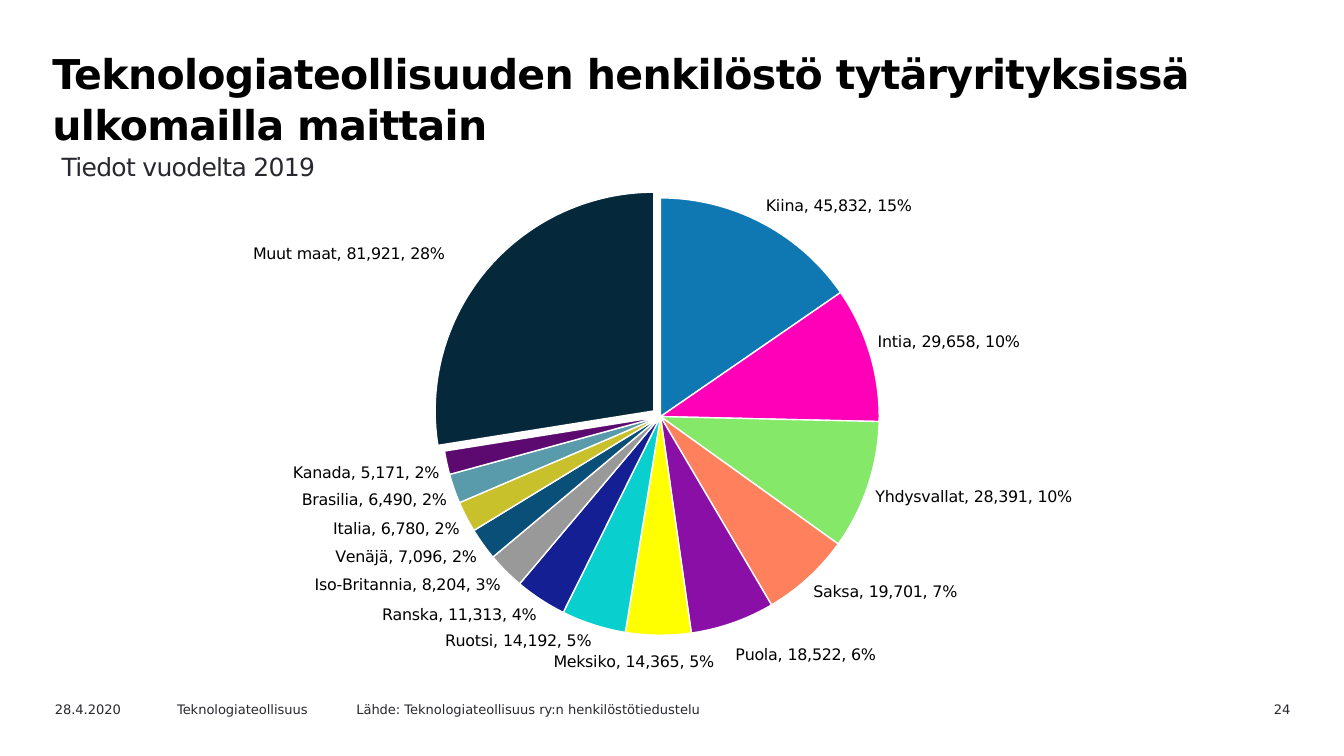
from copy import deepcopy

from lxml.etree import SubElement
from pptx import Presentation
from pptx.chart.data import CategoryChartData
from pptx.dml.color import RGBColor
from pptx.enum.chart import XL_CHART_TYPE, XL_LABEL_POSITION
from pptx.enum.text import PP_ALIGN
from pptx.oxml.ns import qn
from pptx.util import Pt

FONT = "DejaVu Sans"
BLACK = RGBColor(0x00, 0x00, 0x00)
WHITE = RGBColor(0xFF, 0xFF, 0xFF)
INK = RGBColor(0x29, 0x28, 0x2E)

# Country, staff, slice colour
COUNTRIES = [
    ("Kiina", 45832, RGBColor(0x0F, 0x78, 0xB2)),
    ("Intia", 29658, RGBColor(0xFF, 0x00, 0xB8)),
    ("Yhdysvallat", 28391, RGBColor(0x85, 0xE8, 0x69)),
    ("Saksa", 19701, RGBColor(0xFF, 0x80, 0x5C)),
    ("Puola", 18522, RGBColor(0x8A, 0x0F, 0xA6)),
    ("Meksiko", 14365, RGBColor(0xFF, 0xFF, 0x00)),
    ("Ruotsi", 14192, RGBColor(0x0A, 0xCF, 0xCF)),
    ("Ranska", 11313, RGBColor(0x14, 0x1F, 0x94)),
    ("Iso-Britannia", 8204, RGBColor(0x99, 0x99, 0x99)),
    ("Venäjä", 7096, RGBColor(0x0A, 0x4F, 0x77)),
    ("Italia", 6780, RGBColor(0xC8, 0xC1, 0x2C)),
    ("Brasilia", 6490, RGBColor(0x59, 0x9B, 0xAA)),
    ("Kanada", 5171, RGBColor(0x5C, 0x0A, 0x6F)),
    ("Muut maat", 81921, RGBColor(0x05, 0x28, 0x3B)),
]
# Label shifts as shares of the chart's width and height
LABEL_SHIFTS = {"Puola": (0, 0.03), "Meksiko": (-0.02, 0.02), "Muut maat": (-0.03, 0)}
EXPLODED = "Muut maat"
EXPLOSION = 4


def set_format(target, values):
    for name, value in values.items():
        setattr(target, name, value)


def add_text(slide, box, text, size, color=INK, bold=False, align=PP_ALIGN.LEFT,
             tracking=0, margin=None, wrap=True, line_spacing=None):
    shape = slide.shapes.add_textbox(*map(Pt, box))
    frame = shape.text_frame
    frame.word_wrap = wrap
    if margin is not None:
        sides = ("left", "top", "right", "bottom")
        set_format(frame, {f"margin_{side}": Pt(margin) for side in sides})
    paragraph = frame.paragraphs[0]
    paragraph.alignment = align
    if line_spacing:
        paragraph.line_spacing = Pt(line_spacing)
    run = paragraph.add_run()
    run.text = text
    set_format(run.font, {"name": FONT, "size": Pt(size), "bold": bold})
    run.font.color.rgb = color
    if tracking:
        run.font._element.set("spc", str(tracking))


def add_heading(slide, box):
    left, top, width, height = box
    add_text(slide, (left + 1, top, width - 1, height),
             "Teknologiateollisuuden henkilöstö tytäryrityksissä ulkomailla maittain",
             22, BLACK, bold=True, tracking=-35, line_spacing=27)
    add_text(slide, (left + 10, top + 56, 153, 22), "Tiedot vuodelta 2019",
             13.4, tracking=-40, margin=3, wrap=False)


def add_manual_layout(parent, values):
    layout = SubElement(parent, qn("c:layout"))
    manual = SubElement(layout, qn("c:manualLayout"))
    for tag, value in values.items():
        SubElement(manual, qn(f"c:{tag}")).set("val", str(value))
    return layout


def finish_labels(labels):
    """Part the label fields with commas and hide leader lines."""
    parent = labels._element
    for old in parent.findall(qn("c:showLeaderLines")):
        parent.remove(old)
    SubElement(parent, qn("c:separator")).text = ", "
    SubElement(parent, qn("c:showLeaderLines")).set("val", "0")


def shift_label(labels, index, shift):
    """Give one slice its own label, moved from the default place."""
    parent = labels._element
    label = parent.makeelement(qn("c:dLbl"), {})
    SubElement(label, qn("c:idx")).set("val", str(index))
    add_manual_layout(label, dict(zip("xy", shift)))
    for child in parent:
        if child.tag not in (qn("c:dLbl"), qn("c:showLeaderLines")):
            label.append(deepcopy(child))
    position = len(parent.findall(qn("c:dLbl")))
    parent.insert(position, label)


def add_staff_pie(slide, box):
    data = CategoryChartData(number_format="#,##0")
    data.categories = [name for name, _, _ in COUNTRIES]
    data.add_series("Series 1", [staff for _, staff, _ in COUNTRIES])
    frame = slide.shapes.add_chart(XL_CHART_TYPE.PIE, *map(Pt, box), data)
    chart = frame.chart
    set_format(chart, {"has_legend": False, "has_title": False})
    set_format(chart.font, {"name": FONT, "size": Pt(18)})
    chart.font.color.rgb = INK
    plot = chart.plots[0]
    plot.vary_by_categories = True

    # Circle inside the chart box
    plot_area = plot._element.getparent()
    for old in plot_area.findall(qn("c:layout")):
        plot_area.remove(old)
    layout = add_manual_layout(plot_area, {
        "layoutTarget": "inner", "xMode": "edge", "yMode": "edge",
        "x": 0.31, "y": 0.07, "w": 0.36, "h": 0.84})
    plot_area.insert(0, layout)

    # Labels; values take the number format of the data
    series = plot.series[0]
    labels = series.data_labels
    set_format(labels, {
        "show_value": True, "show_category_name": True, "show_percentage": True,
        "position": XL_LABEL_POSITION.OUTSIDE_END})
    set_format(labels.font, {"name": FONT, "size": Pt(8.5)})
    labels.font.color.rgb = BLACK
    finish_labels(labels)

    # Slices
    for index, (name, _, color) in enumerate(COUNTRIES):
        point = series.points[index]
        point.format.fill.solid()
        point.format.fill.fore_color.rgb = color
        point.format.line.color.rgb = WHITE
        point.format.line.width = Pt(0.75)
        if name == EXPLODED:
            point_element = series._element.findall(qn("c:dPt"))[-1]
            explosion = SubElement(point_element, qn("c:explosion"))
            explosion.set("val", str(EXPLOSION))
            point_element.find(qn("c:spPr")).addprevious(explosion)
        if name in LABEL_SHIFTS:
            shift_label(labels, index, LABEL_SHIFTS[name])


def add_footer(slide, box):
    left, top, width, height = box
    parts = [
        (0, 72, "28.4.2020", PP_ALIGN.LEFT),
        (65.5, 102, "Teknologiateollisuus", PP_ALIGN.LEFT),
        (161.5, 234, "Lähde: Teknologiateollisuus ry:n henkilöstötiedustelu", PP_ALIGN.LEFT),
        (width - 68, 68, "24", PP_ALIGN.RIGHT),
    ]
    for offset, part_width, text, align in parts:
        add_text(slide, (left + offset, top, part_width, height), text, 7, align=align)


def main():
    presentation = Presentation()
    set_format(presentation, {"slide_width": Pt(720), "slide_height": Pt(405)})
    slide = presentation.slides.add_slide(presentation.slide_layouts[6])
    add_heading(slide, (20, 22, 630, 51))
    add_staff_pie(slide, (30, 86.5, 661, 279))
    add_footer(slide, (22.3, 372, 676, 13))
    presentation.save("out.pptx")


if __name__ == "__main__":
    main()
